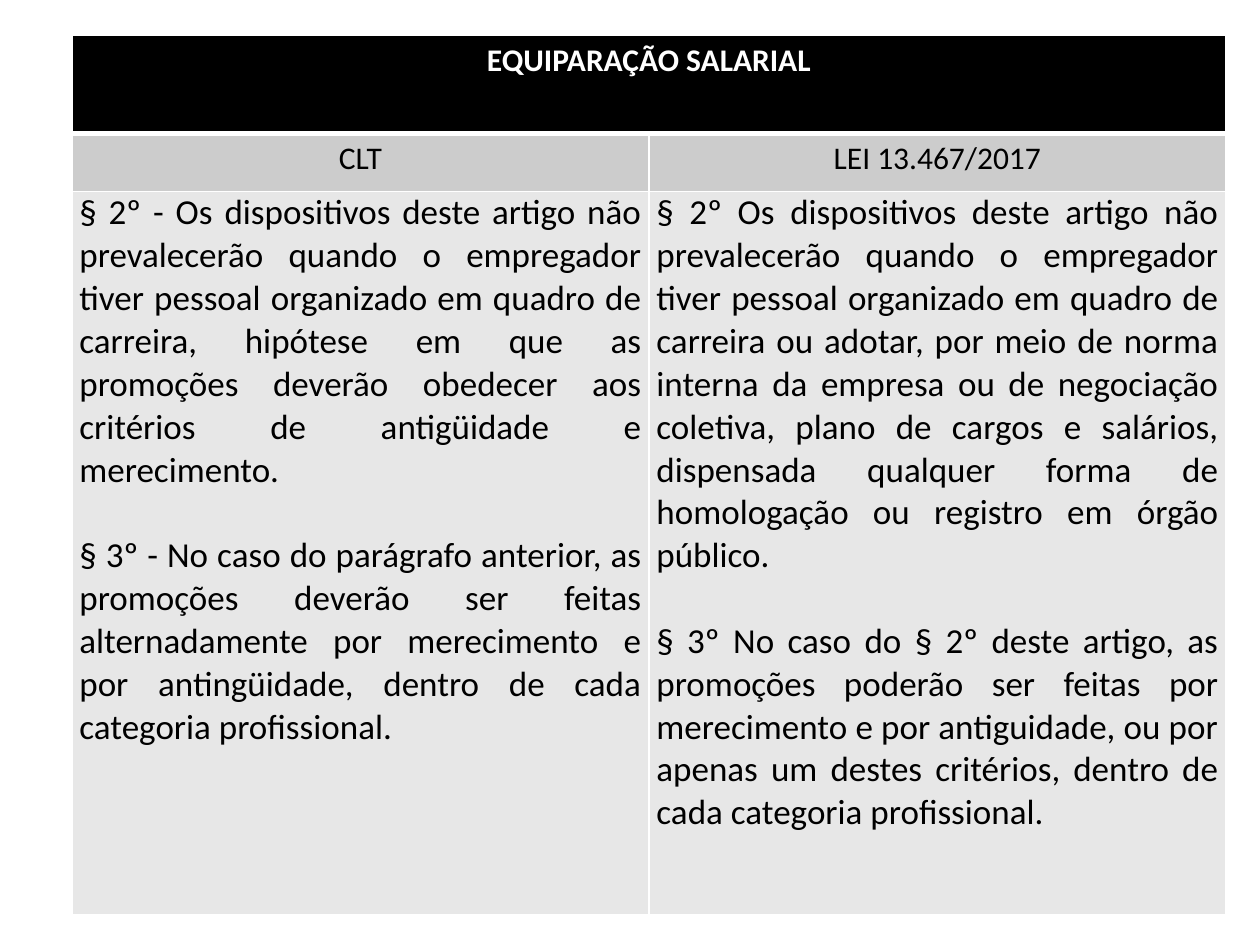
from lxml.etree import SubElement
from pptx import Presentation
from pptx.dml.color import RGBColor
from pptx.enum.text import PP_ALIGN
from pptx.oxml.ns import qn
from pptx.util import Inches, Pt

BLACK = RGBColor(0x00, 0x00, 0x00)
WHITE = RGBColor(0xFF, 0xFF, 0xFF)
MID_GRAY = RGBColor(0xCC, 0xCC, 0xCC)
LIGHT_GRAY = RGBColor(0xE7, 0xE7, 0xE7)

FONT = "Calibri"
BODY_SIZE = 20
BLANK_LINE = Pt(BODY_SIZE * 1.22)
ROW_HEIGHTS = (0.78, 0.46, 5.74)

TITLE = "EQUIPARAÇÃO SALARIAL"
COLUMNS = [
    ("CLT", [
        "§ 2º - Os dispositivos deste artigo não prevalecerão quando o empregador "
        "tiver pessoal organizado em quadro de carreira, hipótese em que as promoções "
        "deverão obedecer aos critérios de antigüidade e merecimento.",
        "§ 3º - No caso do parágrafo anterior, as promoções deverão ser feitas "
        "alternadamente por merecimento e por antingüidade, dentro de cada categoria "
        "profissional.",
    ]),
    ("LEI 13.467/2017", [
        "§ 2º Os dispositivos deste artigo não prevalecerão quando o empregador "
        "tiver pessoal organizado em quadro de carreira ou adotar, por meio de norma "
        "interna da empresa ou de negociação coletiva, plano de cargos e salários, "
        "dispensada qualquer forma de homologação ou registro em órgão público.",
        "§ 3º No caso do § 2º deste artigo, as promoções poderão ser feitas por "
        "merecimento e por antiguidade, ou por apenas um destes critérios, dentro de "
        "cada categoria profissional.",
    ]),
]


def set_borders(cell, bottom_width, top_width):
    """Draw white borders; their elements come before the cell's fill."""
    properties = cell._tc.get_or_add_tcPr()
    widths = {"a:lnL": 1, "a:lnR": 1, "a:lnT": top_width, "a:lnB": bottom_width}
    for position, (tag, width) in enumerate(widths.items()):
        line = SubElement(properties, qn(tag), w=str(Pt(width)))
        fill = SubElement(line, qn("a:solidFill"))
        SubElement(fill, qn("a:srgbClr"), val=str(WHITE))
        properties.insert(position, line)


def fill_cell(cell, texts, background, size=18, color=BLACK, bold=False,
              alignment=PP_ALIGN.CENTER, line_spacing=1.15):
    cell.fill.solid()
    cell.fill.fore_color.rgb = background
    cell.margin_left = cell.margin_right = Inches(0.06)
    cell.margin_top = cell.margin_bottom = 0
    text_frame = cell.text_frame
    text_frame.text = "\n".join(texts)
    for index, paragraph in enumerate(text_frame.paragraphs):
        paragraph.alignment = alignment
        paragraph.line_spacing = line_spacing
        if index:
            paragraph.space_before = BLANK_LINE
        font = paragraph.font
        font.name = FONT
        font.size = Pt(size)
        font.bold = bold
        font.color.rgb = color


def add_comparison_table(slide, left, top, width, height):
    table = slide.shapes.add_table(
        len(ROW_HEIGHTS), len(COLUMNS), left, top, width, height).table
    for row, share in zip(table.rows, ROW_HEIGHTS):
        row.height = int(height * share / sum(ROW_HEIGHTS))

    # Title across both columns
    table.cell(0, 0).merge(table.cell(0, len(COLUMNS) - 1))
    fill_cell(table.cell(0, 0), [TITLE], BLACK, color=WHITE, bold=True)

    # Column headings and law texts
    for index, (heading, paragraphs) in enumerate(COLUMNS):
        fill_cell(table.cell(1, index), [heading], MID_GRAY)
        fill_cell(table.cell(2, index), paragraphs, LIGHT_GRAY, size=BODY_SIZE,
                  alignment=PP_ALIGN.JUSTIFY, line_spacing=1.0)

    # Borders, thicker below the title
    for row_index in range(len(ROW_HEIGHTS)):
        for column_index in range(len(COLUMNS)):
            set_borders(table.cell(row_index, column_index),
                        bottom_width=3 if row_index == 0 else 1,
                        top_width=3 if row_index == 1 else 1)


def main():
    presentation = Presentation()
    presentation.slide_width = Inches(10)
    presentation.slide_height = Inches(7.5)
    slide = presentation.slides.add_slide(presentation.slide_layouts[6])
    add_comparison_table(slide, Inches(0.57), Inches(0.28), Inches(9.16), Inches(6.98))
    presentation.save("out.pptx")


if __name__ == "__main__":
    main()
